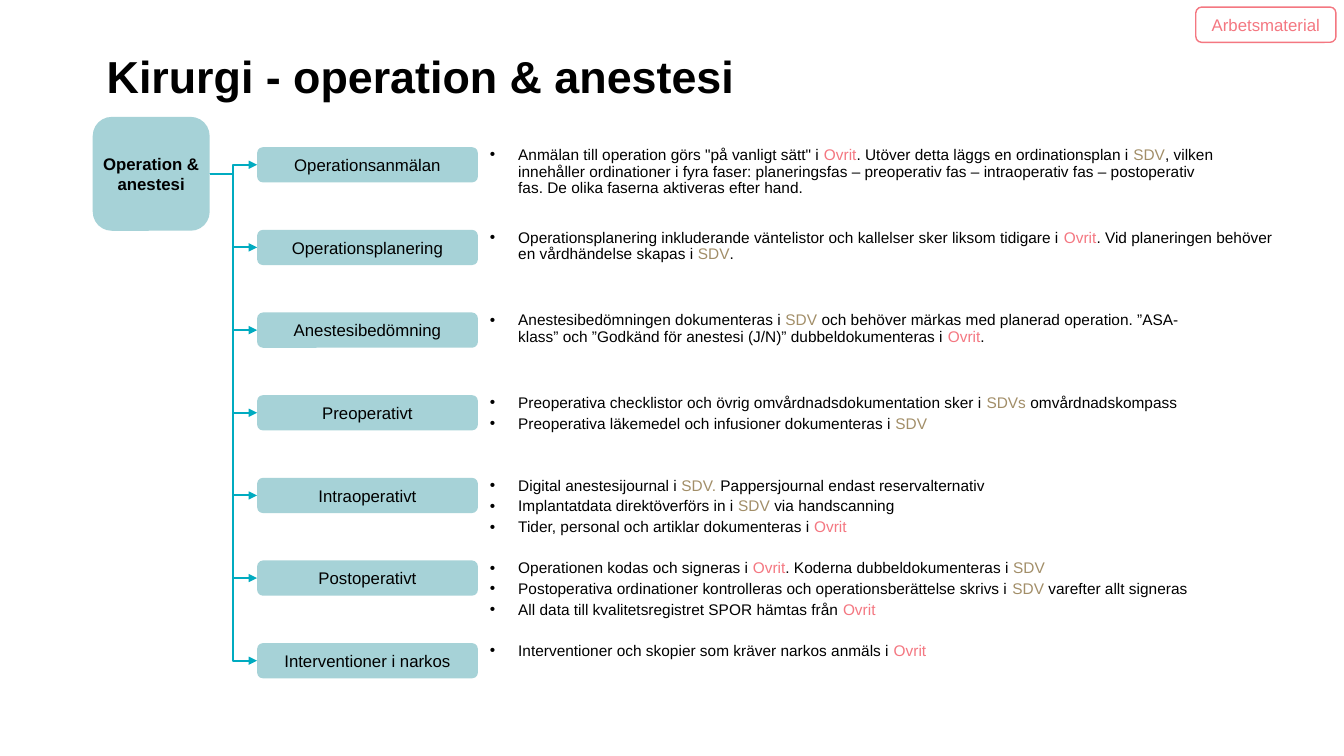
import pptx
import pptx.util
import pptx.dml.color
import pptx.enum.shapes
import pptx.enum.text
import pptx.oxml
import pptx.oxml.ns
from lxml import etree

Inches = pptx.util.Inches
Pt = pptx.util.Pt
qn = pptx.oxml.ns.qn

COLORS = {
    "black": "000000",
    "white": "FFFFFF",
    "box": "A6D2D7",
    "arrow": "00ABC0",
    "planner": "F47781",
    "record": "A28E68",
}
PLANNER = "Ovrit"

STEP_LEFT, STEP_WIDTH, STEP_HEIGHT = 2.55, 2.19, 0.35
NOTE_LEFT, NOTE_WIDTH = 4.86, 7.79
FIRST_ROW, ROW_PITCH = 1.46, 0.82
NOTE_INDENT = 0.28

STEPS = [
    ("Operationsanmälan", 0.52, 0.58, [
        'Anmälan till operation görs "på vanligt sätt" i |Ovrit|. Utöver detta läggs en ordinationsplan i |SDV|'
        ", vilken innehåller ordinationer i fyra faser: planeringsfas – preoperativ fas – intraoperativ fas – "
        "postoperativ fas. De olika faserna aktiveras efter hand.",
    ]),
    ("Operationsplanering", 0.37, 0, [
        "Operationsplanering inkluderande väntelistor och kallelser sker liksom tidigare i |Ovrit|"
        ". Vid planeringen behöver en vårdhändelse skapas i |SDV|.",
    ]),
    ("Anestesibedömning", 0.4, 0.75, [
        "Anestesibedömningen dokumenteras i |SDV |och behöver märkas med planerad operation. "
        "”ASA-klass” och ”Godkänd för anestesi (J/N)” dubbeldokumenteras i |Ovrit|.",
    ]),
    ("Preoperativt", 0.45, 0, [
        "Preoperativa checklistor och övrig omvårdnadsdokumentation sker i |SDVs| omvårdnadskompass",
        "Preoperativa läkemedel och infusioner dokumenteras i |SDV",
    ]),
    ("Intraoperativt", 0.66, 0, [
        "Digital anestesijournal i |SDV.| Pappersjournal endast reservalternativ",
        "Implantatdata direktöverförs in i |SDV| via handscanning",
        "Tider, personal och artiklar dokumenteras i |Ovrit",
    ]),
    ("Postoperativt", 0.57, 0, [
        "Operationen kodas och signeras i |Ovrit|. Koderna dubbeldokumenteras i |SDV",
        "Postoperativa ordinationer kontrolleras och operationsberättelse skrivs i |SDV |varefter allt signeras",
        "All data till kvalitetsregistret SPOR hämtas från |Ovrit",
    ]),
    ("Interventioner i narkos", 0.36, 0, [
        "Interventioner och skopier som kräver narkos anmäls i |Ovrit",
    ]),
]


def style_font(font, size, color, bold=False):
    font.name = "Arial"
    font.size = Pt(size)
    font.bold = bold
    font.color.rgb = pptx.dml.color.RGBColor.from_string(COLORS[color])


def add_label(page, left, top, width, height, text, fill, color="black", bold=False):
    box = page.shapes.add_shape(
        pptx.enum.shapes.MSO_SHAPE.ROUNDED_RECTANGLE,
        Inches(left), Inches(top), Inches(width), Inches(height))
    box.shadow.inherit = False
    box.fill.solid()
    box.fill.fore_color.rgb = pptx.dml.color.RGBColor.from_string(COLORS[fill])
    box.line.fill.background()
    frame = box.text_frame
    frame.word_wrap = True
    frame.vertical_anchor = pptx.enum.text.MSO_ANCHOR.MIDDLE
    frame.margin_left = frame.margin_right = Inches(0.04)
    frame.margin_top = frame.margin_bottom = Inches(0.04)
    frame.text = text
    frame.paragraphs[0].alignment = pptx.enum.text.PP_ALIGN.CENTER
    style_font(frame.paragraphs[0].runs[0].font, 12, color, bold)
    return box


deck = pptx.Presentation()
deck.slide_width = Inches(13.33)
deck.slide_height = Inches(7.5)
page = deck.slides.add_slide(deck.slide_layouts[6])

title = page.shapes.add_textbox(Inches(0.96), Inches(0.43), Inches(11.42), Inches(0.62))
title.text_frame.word_wrap = True
title.text_frame.margin_top = Inches(0.05)
title.text_frame.text = "Kirurgi - operation & anestesi"
style_font(title.text_frame.paragraphs[0].runs[0].font, 32, "black", True)

root = add_label(page, 0.92, 1.16, 1.16, 1.13, "Operation & anestesi", "box", bold=True)

for row, (name, note_height, note_margin, notes) in enumerate(STEPS):
    top = FIRST_ROW + row * ROW_PITCH
    step = add_label(page, STEP_LEFT, top, STEP_WIDTH, STEP_HEIGHT, name, "box")

    arrow = page.shapes.add_connector(
        pptx.enum.shapes.MSO_CONNECTOR.ELBOW,
        root.left + root.width, root.top + root.height // 2,
        step.left, step.top + step.height // 2)
    arrow.begin_connect(root, 3)
    arrow.end_connect(step, 1)
    arrow.line.width = Pt(1.5)
    arrow.line.color.rgb = pptx.dml.color.RGBColor.from_string(COLORS["arrow"])
    outline = arrow.element.spPr.find(qn("a:ln"))
    etree.SubElement(outline, qn("a:tailEnd"), type="triangle")
    etree.SubElement(arrow.element.spPr, qn("a:effectLst"))

    box = page.shapes.add_textbox(
        Inches(NOTE_LEFT), Inches(top), Inches(NOTE_WIDTH), Inches(note_height))
    frame = box.text_frame
    frame.word_wrap = True
    frame.margin_left = frame.margin_top = frame.margin_bottom = 0
    frame.margin_right = Inches(note_margin)
    for index, note in enumerate(notes):
        para = frame.paragraphs[0] if index == 0 else frame.add_paragraph()
        props = para._p.get_or_add_pPr()
        props.set("marL", str(Inches(NOTE_INDENT)))
        props.set("indent", str(-Inches(NOTE_INDENT)))
        etree.SubElement(props, qn("a:buFont"), typeface="Arial")
        etree.SubElement(props, qn("a:buChar"), char="•")
        para.line_spacing = 0.9
        para.space_after = Pt(3)
        for part, words in enumerate(note.split("|")):
            span = para.add_run()
            span.text = words
            system = "planner" if words == PLANNER else "record"
            style_font(span.font, 11, system if part % 2 else "black")

badge = add_label(page, 11.86, 0.07, 1.39, 0.35, "Arbetsmaterial", "white", "planner")
badge.line.color.rgb = pptx.dml.color.RGBColor.from_string(COLORS["planner"])
badge.line.width = Pt(1)

deck.save("out.pptx")
